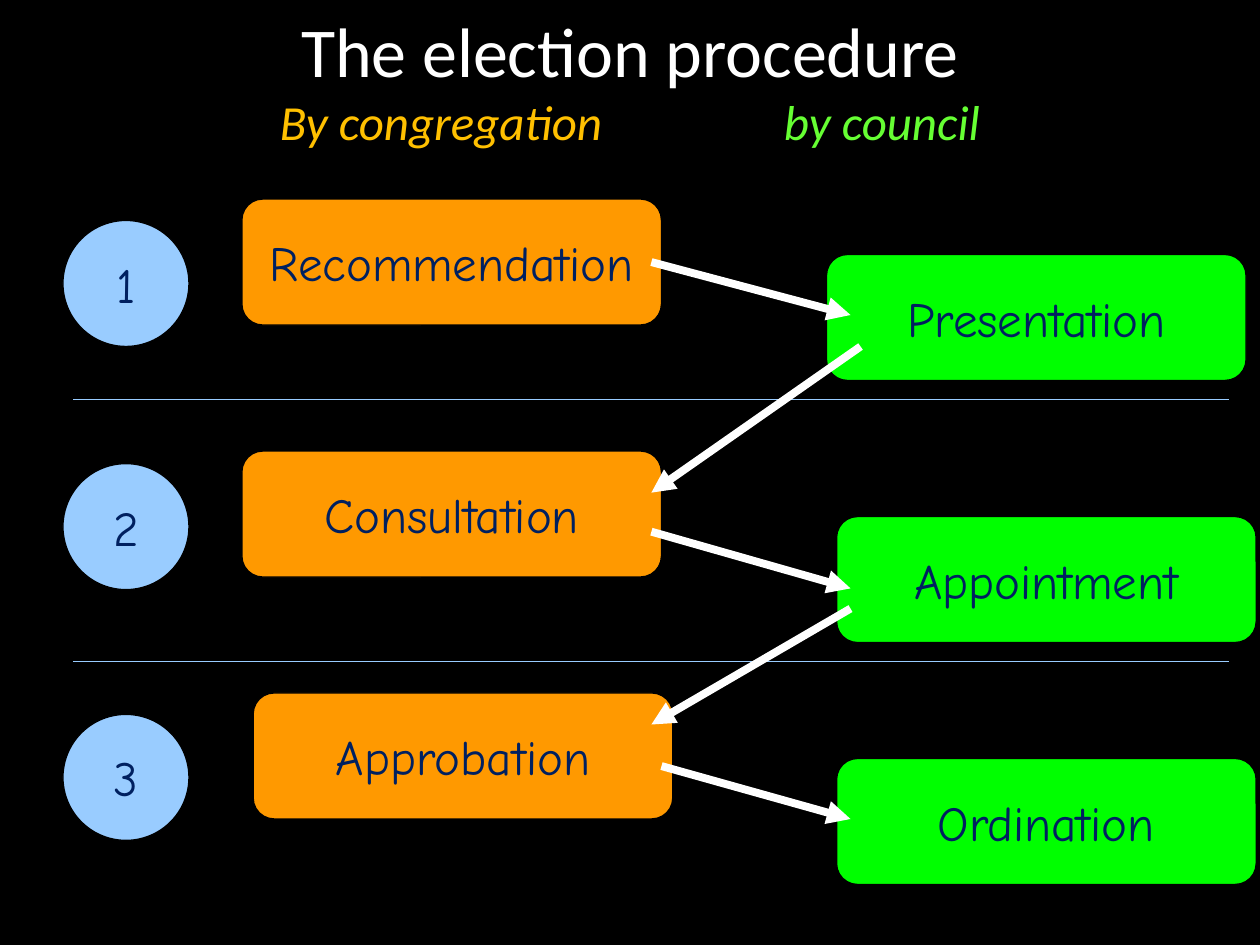
from dataclasses import dataclass

from lxml.etree import SubElement
from pptx import Presentation
from pptx.dml.color import RGBColor
from pptx.enum.shapes import MSO_CONNECTOR, MSO_SHAPE
from pptx.enum.text import MSO_ANCHOR, PP_ALIGN
from pptx.oxml.ns import qn
from pptx.util import Inches, Pt


@dataclass(frozen=True)
class Theme:
    background: str = "000000"
    title: str = "FFFFFF"
    congregation_label: str = "FFC000"
    council_label: str = "66FF33"
    congregation: str = "FF9900"
    council: str = "00FF00"
    step: str = "99CCFF"
    text: str = "002060"
    outline: str = "000000"
    divider: str = "99CCFF"
    arrow: str = "FFFFFF"
    title_font: str = "Calibri"
    body_font: str = "Comic Neue"
    title_size: int = 40
    body_size: int = 28
    thin: float = 0.75
    thick: float = 4.5


THEME = Theme()
BOX_WIDTH, HEIGHT = 3.33, 1

# (label, left, top, fill)
BOXES = [
    ("Recommendation", 1.92, 1.58, THEME.congregation),
    ("Presentation", 6.56, 2.02, THEME.council),
    ("Consultation", 1.92, 3.58, THEME.congregation),
    ("Appointment", 6.64, 4.1, THEME.council),
    ("Approbation", 2.01, 5.5, THEME.congregation),
    ("Ordination", 6.64, 6.02, THEME.council),
]
STEP_TOPS = [1.75, 3.68, 5.67]
DIVIDER_TOPS = [5.25, 3.17]
ARROWS = [
    ((5.17, 2.08), (6.75, 2.5)),
    ((6.83, 2.75), (5.17, 3.91)),
    ((6.75, 4.83), (5.17, 5.75)),
    ((5.17, 4.22), (6.75, 4.67)),
    ((5.25, 6.08), (6.75, 6.5)),
]


def rgb(value):
    return RGBColor.from_string(value)


def add_title_run(p, text, size, color, italic=False):
    r = p.add_run()
    r.text = text
    r.font.size = Pt(size)
    r.font.color.rgb = rgb(color)
    r.font.italic = italic


def fill_title(slide):
    """Write the heading and, below it, the labels of the two columns."""
    title = slide.shapes.title
    title.left, title.top = Inches(0), Inches(0)
    title.width, title.height = Inches(10), Inches(1.25)
    tf = title.text_frame
    tf.vertical_anchor = MSO_ANCHOR.MIDDLE
    p = tf.paragraphs[0]
    p.alignment = PP_ALIGN.CENTER
    p.font.name = THEME.title_font
    add_title_run(p, "The election procedure", THEME.title_size, THEME.title)
    p.add_line_break()
    add_title_run(p, "By congregation\t\t\t", THEME.body_size,
                  THEME.congregation_label, italic=True)
    add_title_run(p, "by council", THEME.body_size,
                  THEME.council_label, italic=True)


def add_label_shape(slide, kind, text, left, top, width, fill):
    sp = slide.shapes.add_shape(kind, Inches(left), Inches(top),
                                Inches(width), Inches(HEIGHT))
    sp.shadow.inherit = False
    sp.fill.solid()
    sp.fill.fore_color.rgb = rgb(fill)
    sp.line.color.rgb = rgb(THEME.outline)
    sp.line.width = Pt(THEME.thin)
    tf = sp.text_frame
    tf.word_wrap = False
    tf.vertical_anchor = MSO_ANCHOR.MIDDLE
    p = tf.paragraphs[0]
    p.text = text
    p.alignment = PP_ALIGN.CENTER
    p.font.name = THEME.body_font
    p.font.size = Pt(THEME.body_size)
    p.font.color.rgb = rgb(THEME.text)


def add_line(slide, start, end, color, width, arrowhead=False):
    line = slide.shapes.add_connector(
        MSO_CONNECTOR.STRAIGHT, *(Inches(v) for v in (*start, *end)))
    line.line.color.rgb = rgb(color)
    line.line.width = Pt(width)
    if arrowhead:
        SubElement(line.line._get_or_add_ln(), qn("a:tailEnd"), type="triangle")
    SubElement(line._element.spPr, qn("a:effectLst"))


def main():
    prs = Presentation()
    prs.slide_width, prs.slide_height = Inches(10), Inches(7.5)
    slide = prs.slides.add_slide(prs.slide_layouts.get_by_name("Title Only"))
    slide.background.fill.solid()
    slide.background.fill.fore_color.rgb = rgb(THEME.background)

    fill_title(slide)
    for label, left, top, fill in BOXES:
        add_label_shape(slide, MSO_SHAPE.ROUNDED_RECTANGLE, label,
                        left, top, BOX_WIDTH, fill)
    for number, top in enumerate(STEP_TOPS, start=1):
        add_label_shape(slide, MSO_SHAPE.OVAL, str(number),
                        0.5, top, HEIGHT, THEME.step)
    for top in DIVIDER_TOPS:
        add_line(slide, (0.58, top), (9.75, top), THEME.divider, THEME.thin)
    for start, end in ARROWS:
        add_line(slide, start, end, THEME.arrow, THEME.thick, arrowhead=True)

    prs.save("out.pptx")


if __name__ == "__main__":
    main()
